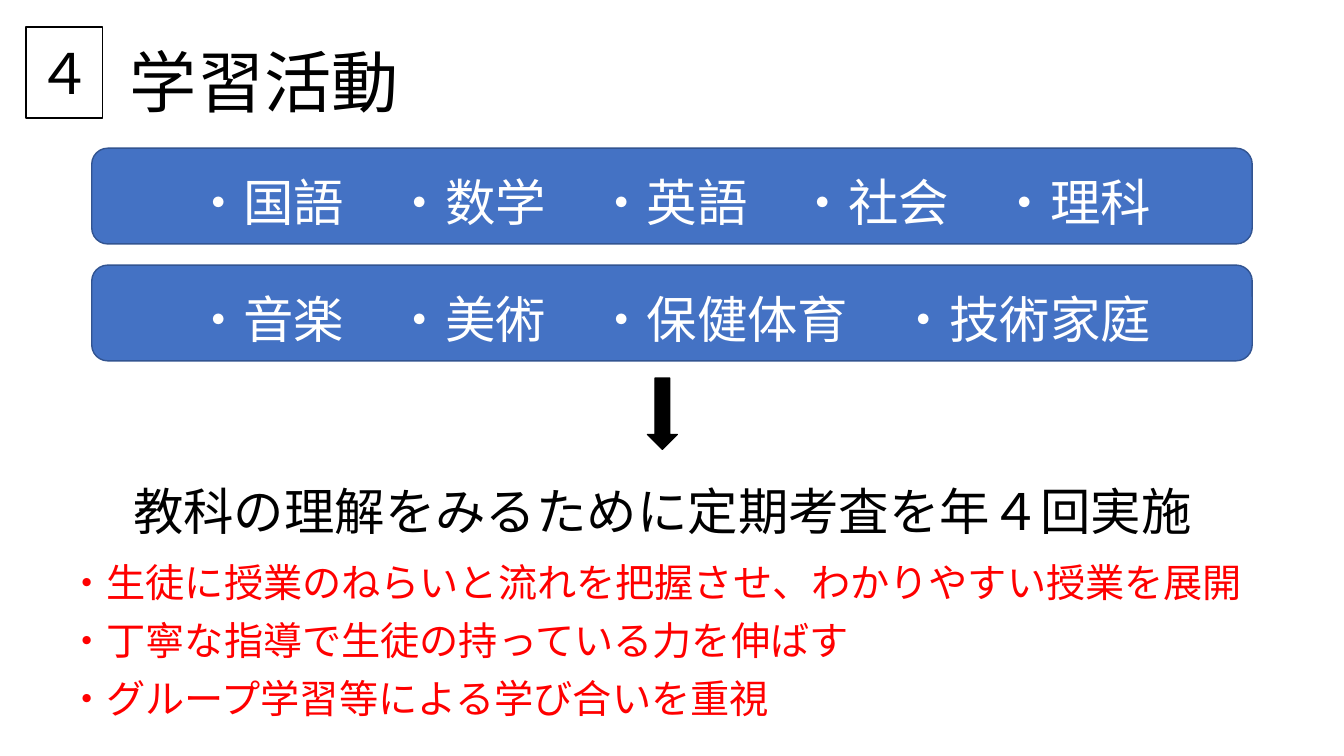
from dataclasses import dataclass

from lxml import etree
from pptx import Presentation
from pptx.dml.color import RGBColor
from pptx.enum import shapes, text
from pptx.oxml.ns import qn
from pptx.shapes.autoshape import Shape
from pptx.slide import Slide
from pptx.util import Inches, Pt

JAPANESE = "Noto Sans CJK JP"
BLACK, WHITE, RED = "000000", "FFFFFF", "FF0000"
BLUE, DARK_BLUE = "4472C4", "325491"
LEFT, CENTER = text.PP_ALIGN.LEFT, text.PP_ALIGN.CENTER
Box = tuple[float, float, float, float]


@dataclass
class Label:
    wording: str
    size: int
    color: str = BLACK
    align: text.PP_ALIGN = LEFT
    font: str = JAPANESE
    top_inset: float = 0.05
    anchor: text.MSO_ANCHOR = text.MSO_ANCHOR.TOP


@dataclass
class Panel:
    kind: shapes.MSO_SHAPE
    box: Box
    fill: str | None
    line: str
    line_width: float = 1
    label: Label | None = None


def rgb(color: str) -> RGBColor:
    return RGBColor.from_string(color)


def write(shape: Shape, label: Label) -> None:
    frame = shape.text_frame
    frame.word_wrap = True
    frame.margin_top = Inches(label.top_inset)
    frame.vertical_anchor = label.anchor
    line = frame.paragraphs[0]
    line.text = label.wording
    line.alignment = label.align
    font = line.font
    font.size = Pt(label.size)
    font.color.rgb = rgb(label.color)
    font.name = label.font
    # East Asian characters take their typeface from a:ea
    properties = line._p.pPr.find(qn("a:defRPr"))
    etree.SubElement(properties, qn("a:ea")).set("typeface", label.font)


def add_label(slide: Slide, box: Box, label: Label) -> None:
    write(slide.shapes.add_textbox(*map(Inches, box)), label)


def add_panel(slide: Slide, panel: Panel) -> None:
    shape = slide.shapes.add_shape(panel.kind, *map(Inches, panel.box))
    shape.shadow.inherit = False
    if panel.fill:
        shape.fill.solid()
        shape.fill.fore_color.rgb = rgb(panel.fill)
    else:
        shape.fill.background()
    shape.line.color.rgb = rgb(panel.line)
    shape.line.width = Pt(panel.line_width)
    if panel.label:
        write(shape, panel.label)


SUBJECT_ROWS = [
    ["国語", "数学", "英語", "社会", "理科"],
    ["音楽", "美術", "保健体育", "技術家庭"],
]
POLICIES = [
    "生徒に授業のねらいと流れを把握させ、わかりやすい授業を展開",
    "丁寧な指導で生徒の持っている力を伸ばす",
    "グループ学習等による学び合いを重視",
]


def main() -> None:
    deck = Presentation()
    deck.slide_width, deck.slide_height = Inches(13.33), Inches(7.5)
    slide = deck.slides.add_slide(deck.slide_layouts[6])
    middle = text.MSO_ANCHOR.MIDDLE

    number = Label("４", 40, align=CENTER, font="Roboto", anchor=middle)
    add_panel(slide, Panel(shapes.MSO_SHAPE.RECTANGLE, (0.26, 0.27, 0.76, 0.9),
                           None, BLACK, label=number))
    add_label(slide, (1.19, 0.35, 6.36, 0.91), Label("学習活動", 48))

    for row, subjects in enumerate(SUBJECT_ROWS):
        names = Label("　".join(f"・{subject}" for subject in subjects), 36, WHITE,
                      CENTER, top_inset=0.16, anchor=middle)
        add_panel(slide, Panel(shapes.MSO_SHAPE.ROUNDED_RECTANGLE,
                               (0.91, 1.47 + 1.16 * row, 11.51, 0.95),
                               BLUE, DARK_BLUE, label=names))

    add_panel(slide, Panel(shapes.MSO_SHAPE.DOWN_ARROW, (6.42, 3.75, 0.3, 0.71),
                           BLACK, BLACK, 0.75))
    add_label(slide, (1.04, 4.62, 11.06, 0.79),
              Label("教科の理解をみるために定期考査を年４回実施", 36,
                    align=CENTER, top_inset=0.14))

    for row, policy in enumerate(POLICIES):
        add_label(slide, (0.57, 5.49 + 0.575 * row, 12.52, 0.57),
                  Label(f"・{policy}", 28, RED))

    deck.save("out.pptx")


if __name__ == "__main__":
    main()
